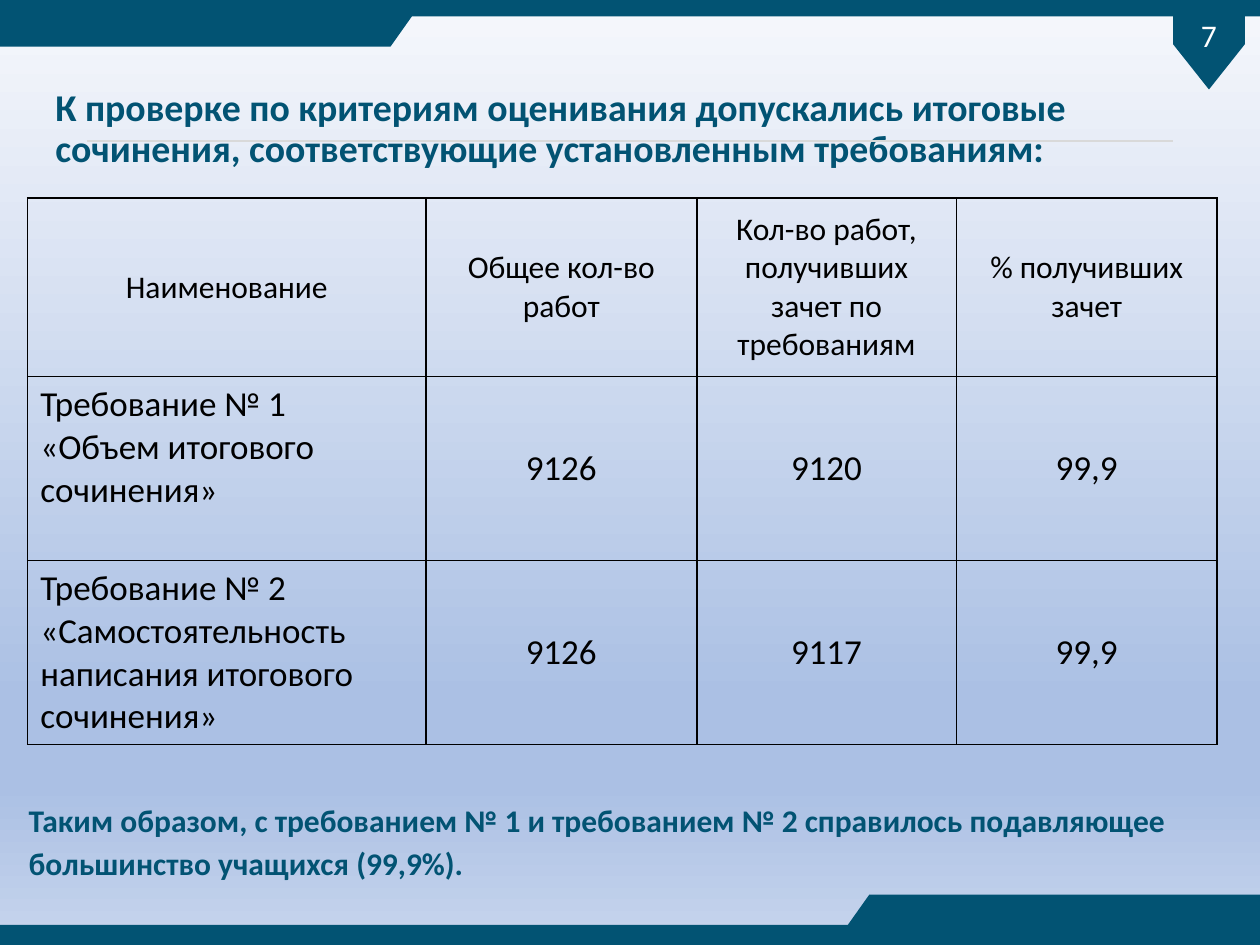
from copy import deepcopy

from lxml import etree
from pptx import Presentation, util as u
from pptx.dml.color import RGBColor
from pptx.enum import shapes, text
from pptx.oxml.ns import qn

COLS, ROWS = 100, 75  # grid of 0.1 inch cells
TEAL, BLACK, WHITE, GREY = "025373", "000000", "FFFFFF", "D9D9D9"
LEFT, CENTER = text.PP_ALIGN.LEFT, text.PP_ALIGN.CENTER
TOP, MIDDLE = text.MSO_ANCHOR.TOP, text.MSO_ANCHOR.MIDDLE


def rgb(hex_color):
    return RGBColor.from_string(hex_color)


def grid(*cells):
    return [u.Inches(c / 10) for c in cells]


class Deck:
    """Holds the style and the current slide; lengths are in grid cells."""

    font = {"name": "Calibri", "bold": False}

    def __init__(self):
        self.prs = Presentation()
        self.prs.slide_width, self.prs.slide_height = grid(COLS, ROWS)
        self.s = self.prs.slides.add_slide(self.prs.slide_layouts[6])

    def background(self, stops):
        fill = self.s.background.fill
        fill.gradient()
        fill.gradient_angle = 270
        gs_list = self.s._element.find(".//" + qn("a:gsLst"))
        while len(gs_list) < len(stops):
            gs_list.append(deepcopy(gs_list[0]))
        for stop, (position, color) in zip(fill.gradient_stops, stops):
            stop.color.rgb = rgb(color)
            stop.position = position

    def set_text(self, tf, words, color=BLACK, align=LEFT, spacing=1.0, **font):
        p = tf.paragraphs[0]
        p.alignment, p.line_spacing = align, spacing
        r = p.add_run()
        r.text = words
        for name, value in {**self.font, **font}.items():
            setattr(r.font, name, value)
        r.font.color.rgb = rgb(color)

    def text(self, box, words, anchor=TOP, **style):
        tf = self.s.shapes.add_textbox(*grid(*box)).text_frame
        tf.word_wrap, tf.vertical_anchor = True, anchor
        self.set_text(tf, words, **style)

    def paint(self, sp, color):
        sp.shadow.inherit = False
        sp.fill.solid()
        sp.fill.fore_color.rgb = rgb(color)
        sp.line.fill.background()

    def outline(self, points, color):
        start, *rest = [grid(*point) for point in points]
        builder = self.s.shapes.build_freeform(*start)
        builder.add_line_segments(rest)
        self.paint(builder.convert_to_shape(), color)

    def page_flag(self, box, number, color):
        """Pentagon turned to point down, with its number kept upright."""
        sp = self.s.shapes.add_shape(shapes.MSO_SHAPE.PENTAGON, *grid(*box))
        sp.rotation, sp.adjustments[0] = 90, 0.63
        self.paint(sp, color)
        tf = sp.text_frame
        for side in ("left", "right", "top", "bottom"):
            setattr(tf, f"margin_{side}", u.Inches(0.01))
        tf.vertical_anchor = MIDDLE
        tf._txBody.bodyPr.set("vert", "vert270")
        self.set_text(tf, number, WHITE, CENTER, size=u.Pt(18))

    def line(self, start, end, color, width):
        c = self.s.shapes.add_connector(
            shapes.MSO_CONNECTOR.STRAIGHT, *grid(*start, *end))
        c.line.color.rgb, c.line.width = rgb(color), u.Pt(width)
        etree.SubElement(c._element.spPr, qn("a:effectLst"))

    def borders(self, cell, color, width):
        tc_pr = cell._tc.get_or_add_tcPr()
        for i, side in enumerate("LRTB"):
            ln = etree.Element(qn(f"a:ln{side}"), w=str(u.Pt(width)))
            fill = etree.SubElement(ln, qn("a:solidFill"))
            etree.SubElement(fill, qn("a:srgbClr"), val=color)
            tc_pr.insert(i, ln)

    def table(self, left, top, widths, heights, rows):
        box = grid(left, top, sum(widths), sum(heights))
        t = self.s.shapes.add_table(len(rows), len(widths), *box).table
        t.first_row = t.horz_banding = False
        for column, width in zip(t.columns, grid(*widths)):
            column.width = width
        for row, height in zip(t.rows, grid(*heights)):
            row.height = height
        for i, row in enumerate(rows):
            for j, words in enumerate(row):
                cell = t.cell(i, j)
                is_label = i > 0 and j == 0
                cell.fill.background()
                cell.vertical_anchor = TOP if is_label else MIDDLE
                self.set_text(cell.text_frame, words,
                              align=LEFT if is_label else CENTER,
                              size=u.Pt(20 if i else 18))
                self.borders(cell, BLACK, 1)


def main():
    d = Deck()
    d.background([(0, "F6F8FC"), (0.74, "ABC0E4"), (0.83, "ABC0E4"), (1, "C7D5ED")])
    d.text((3.4, 5.3, 90.8, 10),
           "К проверке по критериям оценивания допускались итоговые "
           "сочинения, соответствующие установленным требованиям:",
           MIDDLE, color=TEAL, spacing=0.9, size=u.Pt(21.6), bold=True)

    footer = [(69, 71), (COLS, 71), (COLS, ROWS), (0, ROWS), (0, 73.4), (67.3, 73.4)]
    header = [(COLS - x, ROWS - 0.3 - y) for x, y in footer]
    for band in (footer, header):
        d.outline(band, TEAL)
    d.page_flag((92.5, 0.8, 6.9, 5.7), "7", TEAL)
    d.line((6.9, 11.2), (93.1, 11.2), GREY, 0.75)

    d.table(2.2, 15.7, (31.6, 21.5, 20.6, 20.7), (14.2, 14.6, 14.6), [
        ("Наименование", "Общее кол-во работ",
         "Кол-во работ, получивших зачет по требованиям", "% получивших зачет"),
        ("Требование № 1 «Объем итогового сочинения»", "9126", "9120", "99,9"),
        ("Требование № 2 «Самостоятельность написания итогового сочинения»",
         "9126", "9117", "99,9"),
    ])
    d.text((1.3, 62.7, 95.3, 7.7),
           "Таким образом, с требованием № 1 и требованием № 2 справилось "
           "подавляющее большинство учащихся (99,9%).",
           color=TEAL, spacing=1.14, size=u.Pt(18), bold=True)
    d.prs.save("out.pptx")


if __name__ == "__main__":
    main()
